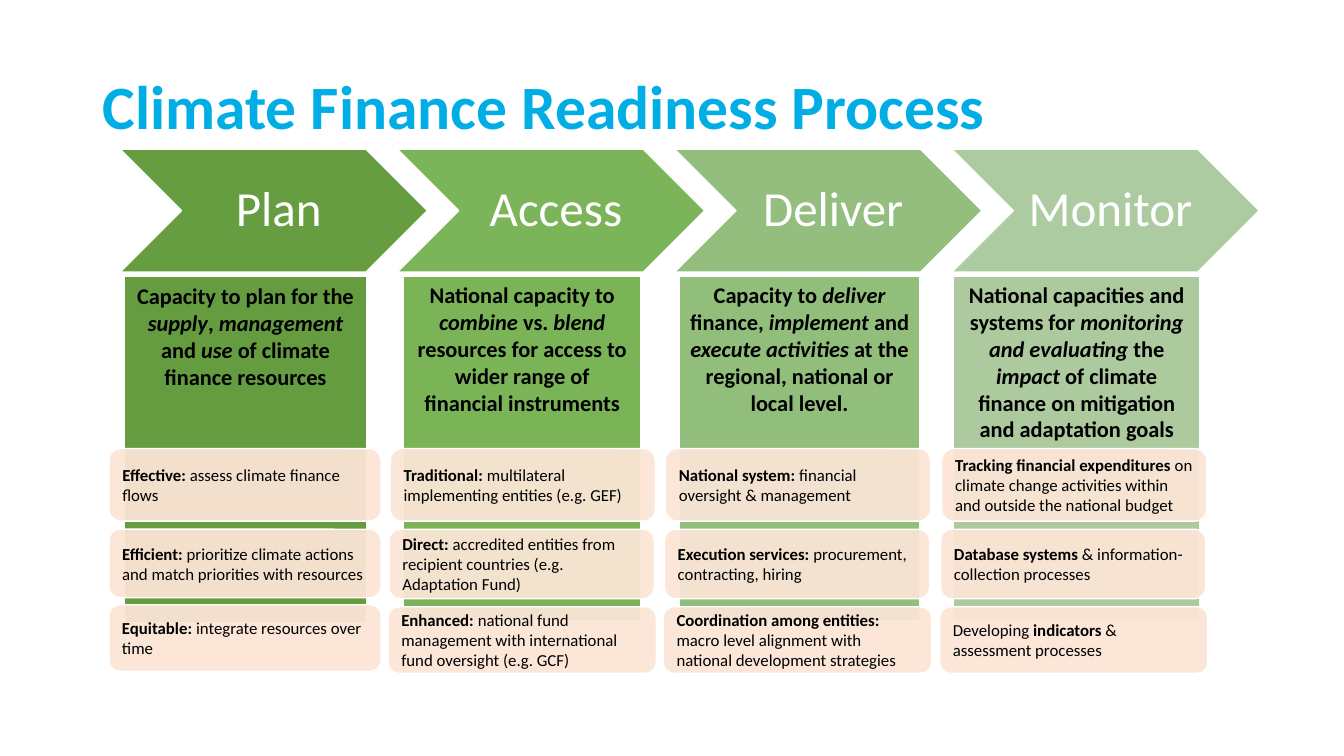
from pptx import Presentation
from pptx.dml.color import RGBColor
from pptx.enum.shapes import MSO_SHAPE as Geo
from pptx.enum.text import MSO_ANCHOR as Anchor, PP_ALIGN as Align
from pptx.util import Pt
from lxml.etree import SubElement
from pptx.oxml.ns import qn

PX = 9144  # 100 px to the inch


def rgb(text):
    return RGBColor.from_string(text)


class Board:
    font = "Calibri"
    white = "FFFFFF"
    black = "000000"
    peach = "FBE5D6"
    blue = "00ADE4"

    def __init__(self, slide):
        self.slide = slide

    def label(self, frame, text, size, color, bold=False, italics=False,
              align=Align.LEFT, anchor=Anchor.MIDDLE, space=1.0):
        """Parts between asterisks turn italic if italics is set, else bold."""
        frame.word_wrap = True
        frame.vertical_anchor = anchor
        para = frame.paragraphs[0]
        para.alignment = align
        para.line_spacing = space
        for n, part in enumerate(text.split("*")):
            if not part:
                continue
            run = para.add_run()
            run.text = part
            marked = n % 2 == 1
            font = run.font
            font.name, font.size = self.font, Pt(size)
            font.color.rgb = rgb(color)
            font.bold = bold or (marked and not italics)
            font.italic = marked and italics

    def shape(self, kind, box, fill, line=True):
        item = self.slide.shapes.add_shape(kind, *[v * PX for v in box])
        item.shadow.inherit = False
        item.fill.solid()
        item.fill.fore_color.rgb = rgb(fill)
        if line:
            item.line.color.rgb = rgb(self.white)
            item.line.width = Pt(1)
        else:
            item.line.fill.background()
        return item

    def title(self, text, box):
        item = self.slide.shapes.add_textbox(*[v * PX for v in box])
        self.label(item.text_frame, text, 44, self.blue, bold=True, space=0.9)

    def arrow(self, text, box, fill):
        frame = self.shape(Geo.CHEVRON, box, fill).text_frame
        self.label(frame, text, 35, self.white, align=Align.CENTER, space=0.9)
        frame.word_wrap = False
        frame.margin_left = 15 * PX
        frame.margin_right = 5 * PX

    def panel(self, text, box, fill, line):
        item = self.shape(Geo.RECTANGLE, box, fill, line)
        self.label(item.text_frame, text, 16, self.black, bold=True,
                   italics=True, align=Align.CENTER, anchor=Anchor.TOP)

    def card(self, text, box):
        item = self.shape(Geo.ROUNDED_RECTANGLE, box, self.peach)
        tint = item.element.spPr.find(qn("a:solidFill"))[0]
        SubElement(tint, qn("a:alpha")).set("val", "94000")
        self.label(item.text_frame, text, 12, self.black)


# Card rows: top, height, shift to the left, extra width
FIRST = [(445, 72, 0, 0), (525, 68, 0, 0), (600, 66, 0, 0)]
OTHER = [(445, 72, 0, 0), (525, 69, 1, 0), (602, 66, 2, 3)]

# Name, arrow fill, panel (left, top, width, fill, line), panel text,
# cards (left, width, rows), card texts
STEPS = [
    ("Plan", "669D40", (124, 275, 239, "659C3F", False),
     "Capacity to plan for the *supply*, *management* and *use* of climate "
     "finance resources",
     (108, 270, FIRST),
     ["*Effective: *assess climate finance flows",
      "*Efficient: *prioritize climate actions and match priorities with "
      "resources",
      "*Equitable: *integrate resources over time"]),
    ("Access", "7BB459", (400, 274, 236, "7AB457", True),
     "National capacity to *combine* vs. *blend* resources for access to "
     "wider range of financial instruments",
     (387, 263, OTHER),
     ["*Traditional: *multilateral implementing entities (e.g. GEF)",
      "*Direct: *accredited entities from recipient countries (e.g. "
      "Adaptation Fund)",
      "*Enhanced: *national fund management with international fund "
      "oversight (e.g. GCF)"]),
    ("Deliver", "94BE7D", (674, 274, 238, "92BE7C", True),
     "Capacity to* deliver *finance, *implement* and *execute activities *"
     "at the regional, national or local level.",
     (660, 263, OTHER),
     ["*National system: *financial oversight & management",
      "*Execution services: *procurement, contracting, hiring",
      "*Coordination among entities: *macro level alignment with national "
      "development strategies"]),
    ("Monitor", "ADCBA0", (946, 274, 244, "ACCA9E", True),
     "National capacities and systems for *monitoring and evaluating* the "
     "*impact* of climate finance on mitigation and adaptation goals",
     (934, 263, OTHER),
     ["*Tracking financial expenditures *on climate change activities "
      "within and outside the national budget",
      "*Database systems *& information-collection processes",
      "Developing *indicators* & assessment processes"]),
]


def main():
    deck = Presentation()
    deck.slide_width, deck.slide_height = 1333 * PX, 750 * PX
    board = Board(deck.slides.add_slide(deck.slide_layouts[6]))
    board.title("Climate Finance Readiness Process", (92, 36, 1150, 145))
    for n, (name, fill, panel, text, cards, notes) in enumerate(STEPS):
        board.arrow(name, (119 + 275 * n, 148, 305, 122), fill)
        left, top, width, tone, line = panel
        board.panel(text, (left, top, width, 342), tone, line)
        left, width, rows = cards
        for note, (top, high, shift, extra) in zip(notes, rows):
            board.card(note, (left - shift, top, width + extra, high))
    deck.save("out.pptx")


if __name__ == "__main__":
    main()
